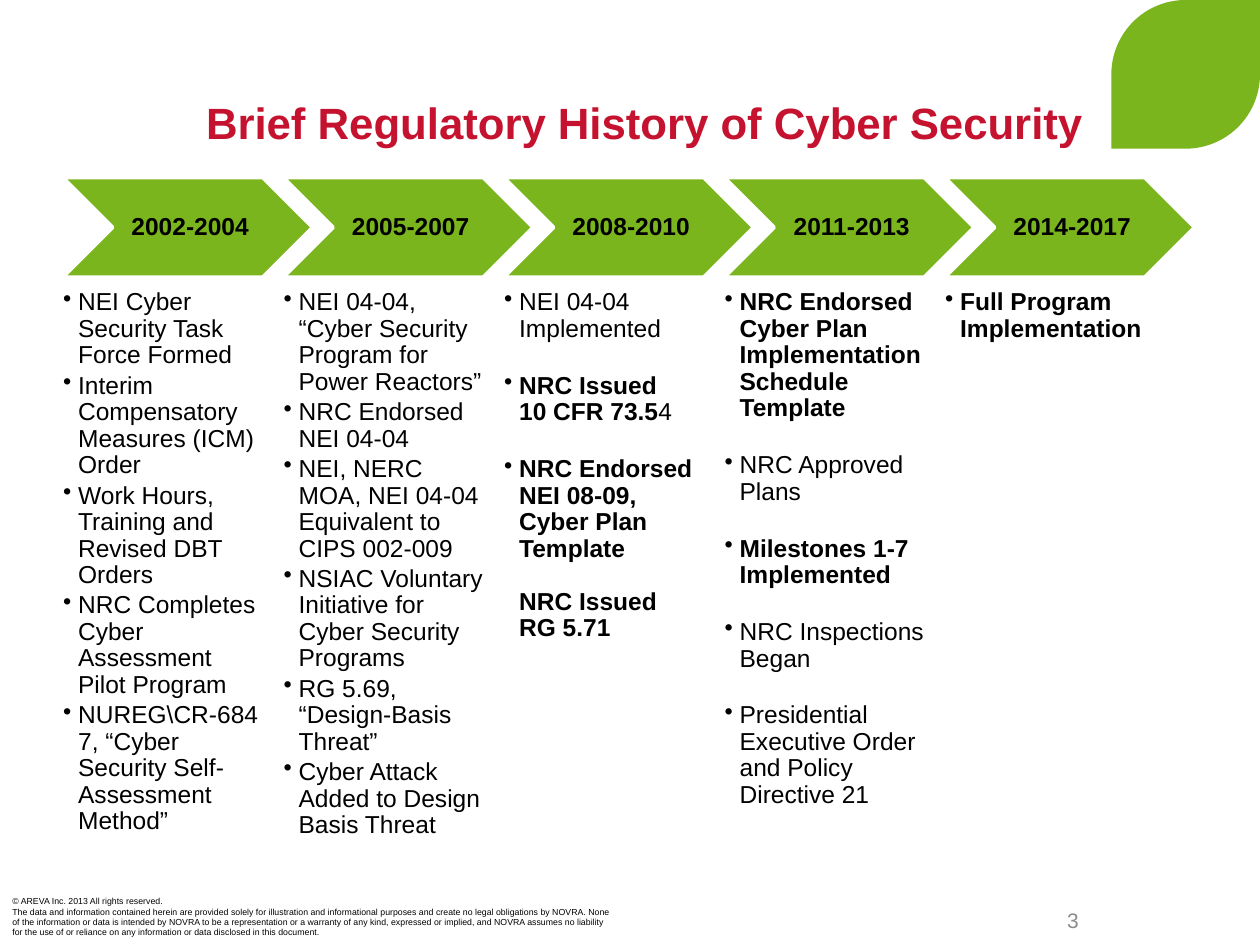
from copy import deepcopy

from lxml.etree import SubElement
from pptx import Presentation
from pptx.dml.color import RGBColor
from pptx.enum.shapes import MSO_SHAPE as Preset
from pptx.enum.text import MSO_ANCHOR as Anchor, PP_ALIGN as Align
from pptx.oxml.ns import qn
from pptx.util import Inches, Pt

GREEN = RGBColor(0x7A, 0xB5, 0x1D)
RED = RGBColor(0xC4, 0x12, 0x2F)
GRAY = RGBColor(0x8C, 0x8C, 0x8C)
BLACK = RGBColor(0, 0, 0)
WHITE = RGBColor(0xFF, 0xFF, 0xFF)

TITLE = "Brief Regulatory History of Cyber Security"

# Space after a milestone, in points
TIGHT, LINE, WIDE = 2.2, 15.1, 17.4

# Period, space between milestones, milestones; ** switches bold on and off
PERIODS = [
    ("2002-2004", TIGHT, [
        "NEI Cyber Security Task Force Formed",
        "Interim Compensatory Measures (ICM) Order",
        "Work Hours, Training and Revised DBT Orders",
        "NRC Completes Cyber Assessment Pilot Program",
        "NUREG\\CR-6847, “Cyber Security Self-Assessment Method”",
    ]),
    ("2005-2007", TIGHT, [
        "NEI 04-04, “Cyber Security Program for Power Reactors”",
        "NRC Endorsed\nNEI 04-04",
        "NEI, NERC MOA, NEI 04-04 Equivalent to\nCIPS 002-009",
        "NSIAC Voluntary Initiative for Cyber Security Programs",
        "RG 5.69, “Design-Basis Threat”",
        "Cyber Attack Added to Design Basis Threat",
    ]),
    ("2008-2010", WIDE, [
        "NEI 04-04 Implemented",
        "**NRC Issued\n10 CFR 73.5**4",
        "**NRC Endorsed\nNEI 08-09, Cyber Plan Template**",
    ]),
    ("2011-2013", WIDE, [
        "**NRC Endorsed Cyber Plan Implementation Schedule Template**",
        "NRC Approved Plans",
        "**Milestones 1-7 Implemented**",
        "NRC Inspections Began",
        "Presidential Executive Order and Policy Directive 21",
    ]),
    ("2014-2017", TIGHT, ["**Full Program Implementation**"]),
]
# Unbulleted continuation of the last milestone of a period
CONTINUATION = {"2008-2010": "**NRC Issued\nRG 5.71**"}

LEGAL = [
    "© AREVA Inc. 2013 All rights reserved.",
    "The data and information contained herein are provided solely for "
    "illustration and informational purposes and create no legal obligations "
    "by NOVRA. None of the information or data is intended by NOVRA to be a "
    "representation or a warranty of any kind, expressed or implied, and NOVRA "
    "assumes no liability for the use of or reliance on any information or "
    "data disclosed in this document.",
]


class TimelineSlide:
    """Holds the style and the slide; columns are counted from the left edge."""

    FONT = "Arial"
    LEFT, PITCH = 0.5, 1.75
    ARROW_TOP, ARROW_WIDTH, ARROW_HEIGHT = 1.41, 1.98, 0.79
    LIST_TOP, LIST_WIDTH, LIST_HEIGHT = 2.3, 1.59, 4.2
    HANG = Inches(0.12)

    def __init__(self, deck):
        self.slide = deck.slides.add_slide(deck.slide_layouts[5])

    def column(self, index):
        return self.LEFT + index * self.PITCH

    def frame(self, shape, anchor=Anchor.TOP, insets=(0, 0, 0, 0)):
        left, top, right, bottom = map(Inches, insets)
        settings = dict(word_wrap=True, vertical_anchor=anchor,
                        margin_left=left, margin_top=top,
                        margin_right=right, margin_bottom=bottom)
        for name, value in settings.items():
            setattr(shape.text_frame, name, value)
        return shape.text_frame

    def put_text(self, paragraph, text, size, color=BLACK, **layout):
        for name, value in layout.items():
            setattr(paragraph, name, value)
        look = dict(name=self.FONT, size=Pt(size))
        for part, piece in enumerate(text.split("**")):
            for row, line in enumerate(piece.split("\n")):
                if row:
                    paragraph.add_line_break()
                    # A break takes the size of the run before it
                    paragraph._p.findall(qn("a:br"))[-1].append(
                        deepcopy(run._r.rPr))
                if not line:
                    continue
                run = paragraph.add_run()
                run.text = line
                for name, value in dict(look, bold=part % 2 == 1).items():
                    setattr(run.font, name, value)
                run.font.color.rgb = color

    def preset(self, kind, left, top, width, height, line=None):
        shape = self.slide.shapes.add_shape(
            kind, *map(Inches, (left, top, width, height)))
        shape.shadow.inherit = False
        shape.fill.solid()
        shape.fill.fore_color.rgb = GREEN
        if line is None:
            shape.line.fill.background()
        else:
            shape.line.color.rgb = line
            shape.line.width = Pt(2)
        return shape

    def box(self, left, top, width, height, **frame):
        return self.frame(self.slide.shapes.add_textbox(
            *map(Inches, (left, top, width, height))), **frame)

    def leaf(self, size):
        leaf = self.preset(Preset.ROUND_2_DIAG_RECTANGLE, 10 - size, 0, size, size)
        leaf.adjustments[0] = 0.5

    def title(self, text):
        title = self.slide.shapes.title
        place = dict(left=0.51, top=0.2, width=8.08, height=0.98)
        for name, value in place.items():
            setattr(title, name, Inches(value))
        heading = self.frame(title, Anchor.BOTTOM).paragraphs[0]
        self.put_text(heading, f"**{text}**", 25, RED,
                      alignment=Align.RIGHT, line_spacing=0.9)

    def arrow(self, index, period):
        arrow = self.preset(Preset.CHEVRON, self.column(index), self.ARROW_TOP,
                            self.ARROW_WIDTH, self.ARROW_HEIGHT, WHITE)
        label = self.frame(arrow, Anchor.MIDDLE, (0.06, 0.02, 0.02, 0.02))
        self.put_text(label.paragraphs[0], f"**{period}**", 14,
                      alignment=Align.CENTER, line_spacing=0.9)

    def milestones(self, index, entries, gap, continuation=None):
        body = self.box(self.column(index), self.LIST_TOP,
                        self.LIST_WIDTH, self.LIST_HEIGHT)
        rows = [(entry, gap, True) for entry in entries]
        if continuation:
            rows[-1] = (entries[-1], LINE, True)
            rows.append((continuation, 0, False))
        for number, (entry, after, bulleted) in enumerate(rows):
            paragraph = body.add_paragraph() if number else body.paragraphs[0]
            properties = paragraph._p.get_or_add_pPr()
            properties.set("marL", str(self.HANG))
            if bulleted:
                properties.set("indent", str(-self.HANG))
                SubElement(properties, qn("a:buChar"), char="•")
            self.put_text(paragraph, entry, 14, line_spacing=0.9,
                          space_after=Pt(after))

    def footer(self, legal, number):
        page = self.box(6.33, 7.1, 2.33, 0.4, anchor=Anchor.MIDDLE,
                        insets=(0.1, 0.05, 0.1, 0.05))
        self.put_text(page.paragraphs[0], number, 12, GRAY, alignment=Align.RIGHT)
        notice = self.box(0, 6.98, 5, 0.52, insets=(0.1, 0.13, 0.1, 0.05))
        for row, text in enumerate(legal):
            paragraph = notice.add_paragraph() if row else notice.paragraphs[0]
            self.put_text(paragraph, text, 5)


def main():
    deck = Presentation()
    deck.slide_width, deck.slide_height = Inches(10), Inches(7.5)
    page = TimelineSlide(deck)

    # Heading
    page.leaf(1.18)
    page.title(TITLE)

    # Timeline
    for index, (period, gap, entries) in enumerate(PERIODS):
        page.arrow(index, period)
        page.milestones(index, entries, gap, CONTINUATION.get(period))

    # Legal notice and page number
    page.footer(LEGAL, "3")
    deck.save("out.pptx")


if __name__ == "__main__":
    main()
